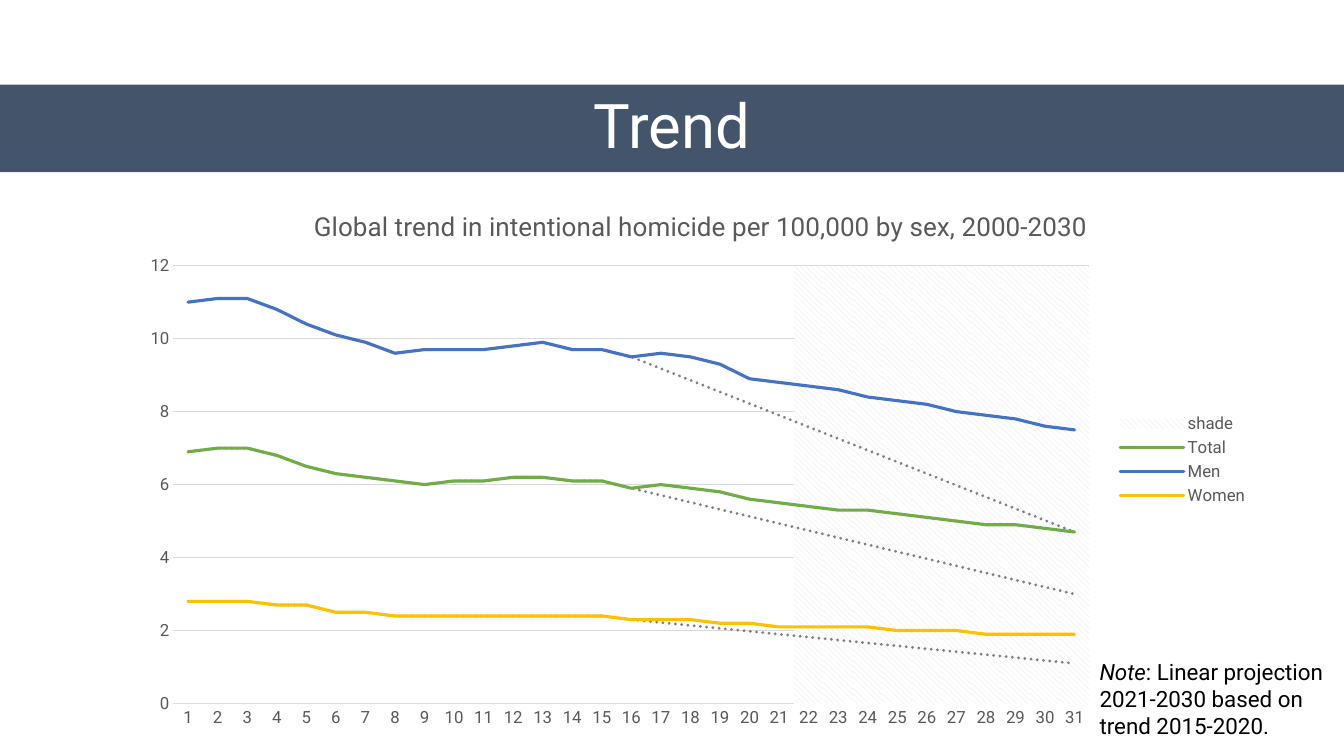
from dataclasses import dataclass

from pptx import Presentation
from pptx.chart.data import CategoryChartData
from pptx.dml.color import RGBColor
from pptx.enum.chart import XL_CHART_TYPE as ChartType, XL_LEGEND_POSITION as LegendPos
from pptx.enum.chart import XL_MARKER_STYLE as Marker, XL_TICK_MARK as Tick
from pptx.enum.dml import MSO_LINE_DASH_STYLE as Dash, MSO_PATTERN_TYPE as Pattern
from pptx.enum.text import MSO_ANCHOR, MSO_AUTO_SIZE, PP_ALIGN
from pptx.oxml import parse_xml
from pptx.oxml.ns import nsdecls, qn
from pptx.util import Cm, Pt

FONT = "Roboto"
SLATE, GREY, PALE, DOTS = "44546A", "595959", "D9D9D9", "808080"
YEARS, LAST_BASE, LAST_ACTUAL, TOP = 31, 16, 21, 12


@dataclass
class Trend:
    name: str
    values: list[float | None]
    color: str
    dotted: bool = False


def rgb(color: str) -> RGBColor:
    return RGBColor.from_string(color)


def set_font(font, size: float, color: str, **extra) -> None:
    values = {"name": FONT, "size": Pt(size), **extra}
    for key, value in values.items():
        setattr(font, key, value)
    font.color.rgb = rgb(color)


def target(name: str, base: Trend, goal: float) -> Trend:
    """Dotted line from the base year straight to the goal in the last year."""
    gap = [None] * (YEARS - LAST_BASE - 1)
    return Trend(name, base.values[:LAST_BASE] + gap + [goal], DOTS, True)


def layout_xml(x: float, y: float, w: float | None = None, h: float | None = None):
    """Manual layout in fractions of the chart; inner plot area if a size is given."""
    inner = '<c:layoutTarget val="inner"/>' if w else ""
    size = f'<c:w val="{w}"/><c:h val="{h}"/>' if w else ""
    return parse_xml(
        f'<c:layout {nsdecls("c")}><c:manualLayout>{inner}'
        f'<c:xMode val="edge"/><c:yMode val="edge"/>'
        f'<c:x val="{x}"/><c:y val="{y}"/>{size}</c:manualLayout></c:layout>')


def set_layout(parent, layout, position: int) -> None:
    for old in parent.findall(qn("c:layout")):
        parent.remove(old)
    parent.insert(position, layout)


def move_to_lines(chart) -> None:
    """Put every series but the first into a line plot on the same axes."""
    bars = chart.plots[0]._element
    lines = parse_xml(f'<c:lineChart {nsdecls("c")}><c:grouping val="standard"/>'
                      '<c:varyColors val="0"/></c:lineChart>')
    for ser in bars.findall(qn("c:ser"))[1:]:
        for flag in ser.findall(qn("c:invertIfNegative")):
            ser.remove(flag)
        lines.append(ser)
    lines.append(parse_xml(f'<c:marker {nsdecls("c")} val="1"/>'))
    for axis in bars.findall(qn("c:axId")):
        lines.append(parse_xml(f'<c:axId {nsdecls("c")} val="{axis.get("val")}"/>'))
    bars.addnext(lines)


def style_line(series, trend: Trend) -> None:
    line = series.format.line
    line.color.rgb = rgb(trend.color)
    line.width = Pt(2.25)
    if trend.dotted:
        line.dash_style = Dash.ROUND_DOT
    line._ln.set("cap", "rnd")
    series.marker.style = Marker.NONE
    series.smooth = False


def style_axis(axis) -> None:
    axis.major_tick_mark = axis.minor_tick_mark = Tick.NONE
    set_font(axis.tick_labels.font, 12, GREY)


def add_trend_chart(s, trends: list[Trend]) -> None:
    data = CategoryChartData()
    data.categories = [str(n) for n in range(1, YEARS + 1)]
    data.add_series("shade", [0] * LAST_ACTUAL + [TOP] * (YEARS - LAST_ACTUAL))
    for trend in trends:
        data.add_series(trend.name, trend.values)
    chart = s.shapes.add_chart(ChartType.COLUMN_CLUSTERED, Cm(3.23), Cm(4.6),
                               Cm(28.5), Cm(13.97), data).chart
    set_font(chart.font, 10, "000000")

    # Shaded projection years and lines
    bars = chart.plots[0]
    bars.gap_width, bars.vary_by_categories = 0, False
    fill = bars.series[0].format.fill
    fill.patterned()
    fill.pattern = Pattern.WIDE_DOWNWARD_DIAGONAL
    fill.fore_color.rgb, fill.back_color.rgb = rgb("E2E2E2"), rgb("FFFFFF")
    move_to_lines(chart)
    for series, trend in zip(chart.plots[1].series, trends):
        style_line(series, trend)
    root = chart._chartSpace.chart
    root.find(qn("c:dispBlanksAs")).set("val", "span")
    set_layout(root.plotArea, layout_xml(0.04, 0.15, 0.81, 0.79), 0)

    # Axes
    cat, val = chart.category_axis, chart.value_axis
    for axis in (cat, val):
        style_axis(axis)
    val.minimum_scale, val.maximum_scale, val.major_unit = 0, TOP, 2
    val.format.line.fill.background()
    for line in (cat.format.line, val.major_gridlines.format.line):
        line.color.rgb, line.width = rgb(PALE), Pt(0.75)

    # Chart title
    title = chart.chart_title
    p = title.text_frame.paragraphs[0]
    r = p.add_run()
    r.text = "Global trend in intentional homicide per 100,000 by sex, 2000-2030"
    set_font(r.font, 18.6, GREY, bold=False)
    set_layout(title._element, layout_xml(0.16, 0.04), 1)
    title.include_in_layout = False

    # Legend without the dotted lines
    chart.has_legend = True
    legend = chart.legend
    legend.position, legend.include_in_layout = LegendPos.RIGHT, False
    set_font(legend.font, 12, GREY)
    hidden = [i for i, trend in enumerate(trends, 1) if trend.dotted]
    for place, i in enumerate(hidden, 1):
        legend._element.insert(place, parse_xml(
            f'<c:legendEntry {nsdecls("c")}><c:idx val="{i}"/>'
            '<c:delete val="1"/></c:legendEntry>'))


def add_title(s) -> None:
    sp = s.shapes.title
    sp.left, sp.top, sp.width, sp.height = Cm(0), Cm(2.13), Cm(33.87), Cm(2.21)
    sp.fill.solid()
    sp.fill.fore_color.rgb = rgb(SLATE)
    tf = sp.text_frame
    tf.text = "Trend"
    tf.auto_size, tf.vertical_anchor = MSO_AUTO_SIZE.NONE, MSO_ANCHOR.MIDDLE
    p = tf.paragraphs[0]
    p.alignment, p.line_spacing = PP_ALIGN.CENTER, 0.9
    set_font(p.runs[0].font, 44, "FFFFFF")


def add_note(s) -> None:
    tf = s.shapes.add_textbox(Cm(27.46), Cm(16.46), Cm(6.4), Cm(2.31)).text_frame
    tf.word_wrap, tf.auto_size = True, MSO_AUTO_SIZE.SHAPE_TO_FIT_TEXT
    p = tf.paragraphs[0]
    for text, italic in (("Note", True),
                         (": Linear projection 2021-2030 based on trend 2015-2020.", False)):
        r = p.add_run()
        r.text = text
        set_font(r.font, 16, "000000", italic=italic)


def main() -> None:
    total = Trend("Total", [
        6.9, 7, 7, 6.8, 6.5, 6.3, 6.2, 6.1, 6, 6.1, 6.1, 6.2, 6.2, 6.1, 6.1, 5.9,
        6, 5.9, 5.8, 5.6, 5.5, 5.4, 5.3, 5.3, 5.2, 5.1, 5, 4.9, 4.9, 4.8, 4.7], "70AD47")
    men = Trend("Men", [
        11, 11.1, 11.1, 10.8, 10.4, 10.1, 9.9, 9.6, 9.7, 9.7, 9.7, 9.8, 9.9, 9.7, 9.7, 9.5,
        9.6, 9.5, 9.3, 8.9, 8.8, 8.7, 8.6, 8.4, 8.3, 8.2, 8, 7.9, 7.8, 7.6, 7.5], "4472C4")
    women = Trend("Women", [
        2.8, 2.8, 2.8, 2.7, 2.7, 2.5, 2.5, 2.4, 2.4, 2.4, 2.4, 2.4, 2.4, 2.4, 2.4, 2.3,
        2.3, 2.3, 2.2, 2.2, 2.1, 2.1, 2.1, 2.1, 2, 2, 2, 1.9, 1.9, 1.9, 1.9], "FFC000")
    targets = [target("Series 2", women, 1.1), target("Series 3", men, 4.7),
               target("Series 4", total, 3)]

    prs = Presentation()
    prs.slide_width, prs.slide_height = Cm(33.87), Cm(19.05)
    s = prs.slides.add_slide(prs.slide_layouts[5])
    add_title(s)
    add_trend_chart(s, targets + [total, men, women])
    add_note(s)
    prs.save("out.pptx")


if __name__ == "__main__":
    main()
